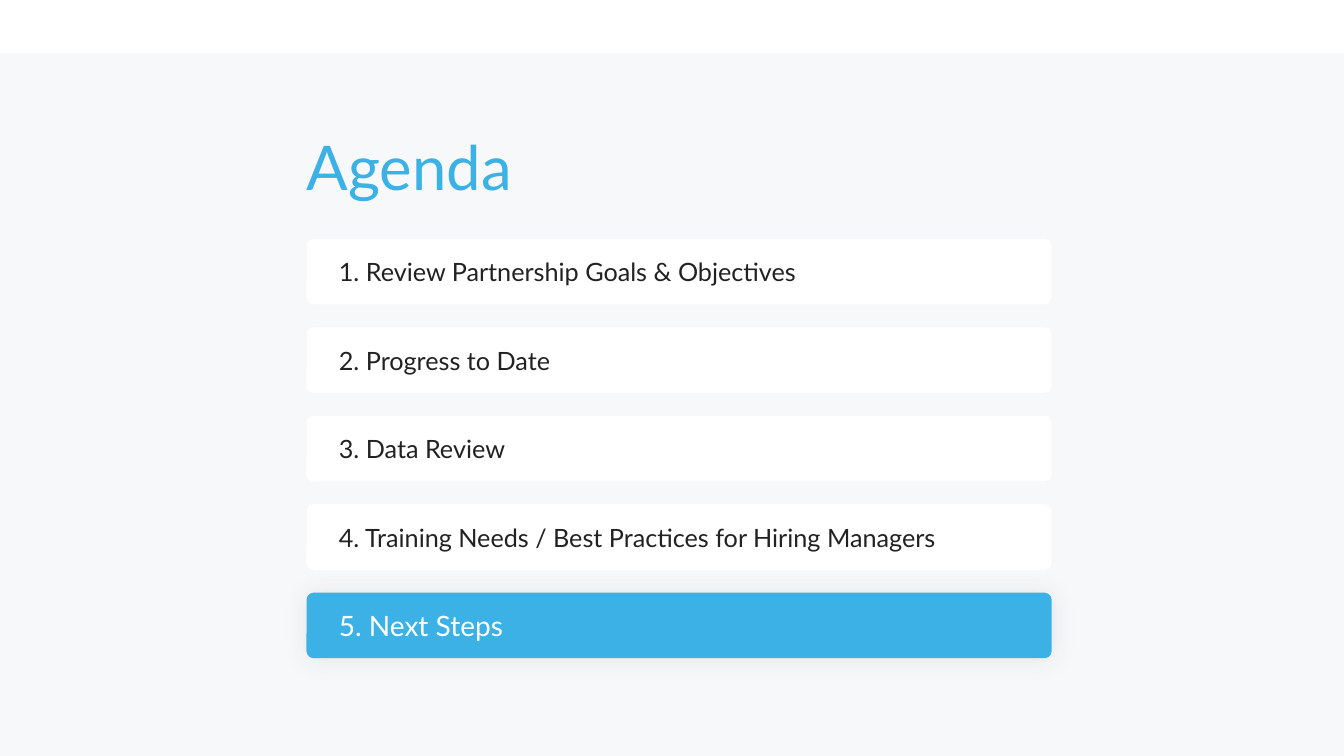
"""Build the agenda slide with its final item highlighted."""
from dataclasses import dataclass

from lxml import etree
from pptx import Presentation
from pptx.dml.color import RGBColor
from pptx.enum.shapes import MSO_SHAPE
from pptx.enum.text import MSO_ANCHOR, PP_ALIGN
from pptx.oxml.ns import qn
from pptx.util import Inches, Pt

RECTANGLE = MSO_SHAPE.RECTANGLE
ROUNDED = MSO_SHAPE.ROUNDED_RECTANGLE
MIDDLE = MSO_ANCHOR.MIDDLE
LEFT = PP_ALIGN.LEFT

TITLE = "Agenda"
ITEMS = [
    "1. Review Partnership Goals & Objectives",
    "2. Progress to Date",
    "3. Data Review",
    "4. Training Needs / Best Practices for Hiring Managers",
    "5. Next Steps",
]
CURRENT = 4


@dataclass(frozen=True)
class Theme:
    font: str = "Lato"
    panel: str = "F7F8F9"
    card: str = "FFFFFF"
    accent: str = "3CB1E5"
    ink: str = "222222"
    glow: str = "214868"
    title_size: int = 44
    item_size: int = 18
    current_size: int = 20


THEME = Theme()
SLIDE_WIDTH, SLIDE_HEIGHT = 13.33, 7.5
PANEL_TOP = 0.53
COLUMN_LEFT, COLUMN_WIDTH = 3.04, 7.39
TITLE_TOP, TITLE_WIDTH, TITLE_HEIGHT = 1.36, 2.75, 0.84
FIRST_TOP, LAST_TOP, CARD_HEIGHT = 2.37, 5.88, 0.65
ROW_PITCH = (LAST_TOP - FIRST_TOP) / (len(ITEMS) - 1)
CARD_RADIUS = 0.07
TEXT_INDENT, TEXT_MARGIN = 0.3, 0.07


def add_box(slide, kind, left, top, width, height, color):
    shape = slide.shapes.add_shape(kind, *map(Inches, (left, top, width, height)))
    shape.shadow.inherit = False
    shape.fill.solid()
    shape.fill.fore_color.rgb = RGBColor.from_string(color)
    shape.line.fill.background()
    return shape


def set_margins(frame, left, rest):
    frame.word_wrap = True
    frame.margin_left = Inches(left)
    frame.margin_top = frame.margin_right = frame.margin_bottom = Inches(rest)


def write(frame, text, size, color):
    paragraph = frame.paragraphs[0]
    paragraph.text = text
    paragraph.alignment = LEFT
    paragraph.font.name = THEME.font
    paragraph.font.size = Pt(size)
    paragraph.font.color.rgb = RGBColor.from_string(color)
    return paragraph


def add_glow(shape):
    effects = shape.element.spPr.find(qn("a:effectLst"))
    shadow = etree.SubElement(effects, qn("a:outerShdw"), blurRad=str(Pt(18)),
                              dist="0", algn="ctr", rotWithShape="0")
    color = etree.SubElement(shadow, qn("a:srgbClr"), val=THEME.glow)
    etree.SubElement(color, qn("a:alpha"), val="10000")


def add_title(slide):
    box = slide.shapes.add_textbox(*map(
        Inches, (COLUMN_LEFT, TITLE_TOP, TITLE_WIDTH, TITLE_HEIGHT)))
    set_margins(box.text_frame, 0, 0)
    paragraph = write(box.text_frame, TITLE, THEME.title_size, THEME.accent)
    paragraph.line_spacing = 0.9


def add_item(slide, row, text):
    current = row == CURRENT
    card = add_box(slide, ROUNDED, COLUMN_LEFT, FIRST_TOP + row * ROW_PITCH,
                   COLUMN_WIDTH, CARD_HEIGHT,
                   THEME.accent if current else THEME.card)
    card.adjustments[0] = CARD_RADIUS / CARD_HEIGHT
    frame = card.text_frame
    frame.vertical_anchor = MIDDLE
    set_margins(frame, TEXT_INDENT, TEXT_MARGIN)
    if current:
        add_glow(card)
        write(frame, text, THEME.current_size, THEME.card)
    else:
        write(frame, text, THEME.item_size, THEME.ink)


def main():
    presentation = Presentation()
    presentation.slide_width = Inches(SLIDE_WIDTH)
    presentation.slide_height = Inches(SLIDE_HEIGHT)
    slide = presentation.slides.add_slide(presentation.slide_layouts[6])
    add_box(slide, RECTANGLE, 0, PANEL_TOP, SLIDE_WIDTH,
            SLIDE_HEIGHT - PANEL_TOP, THEME.panel)
    for row, text in enumerate(ITEMS):
        add_item(slide, row, text)
    add_title(slide)
    presentation.save("out.pptx")


if __name__ == "__main__":
    main()
